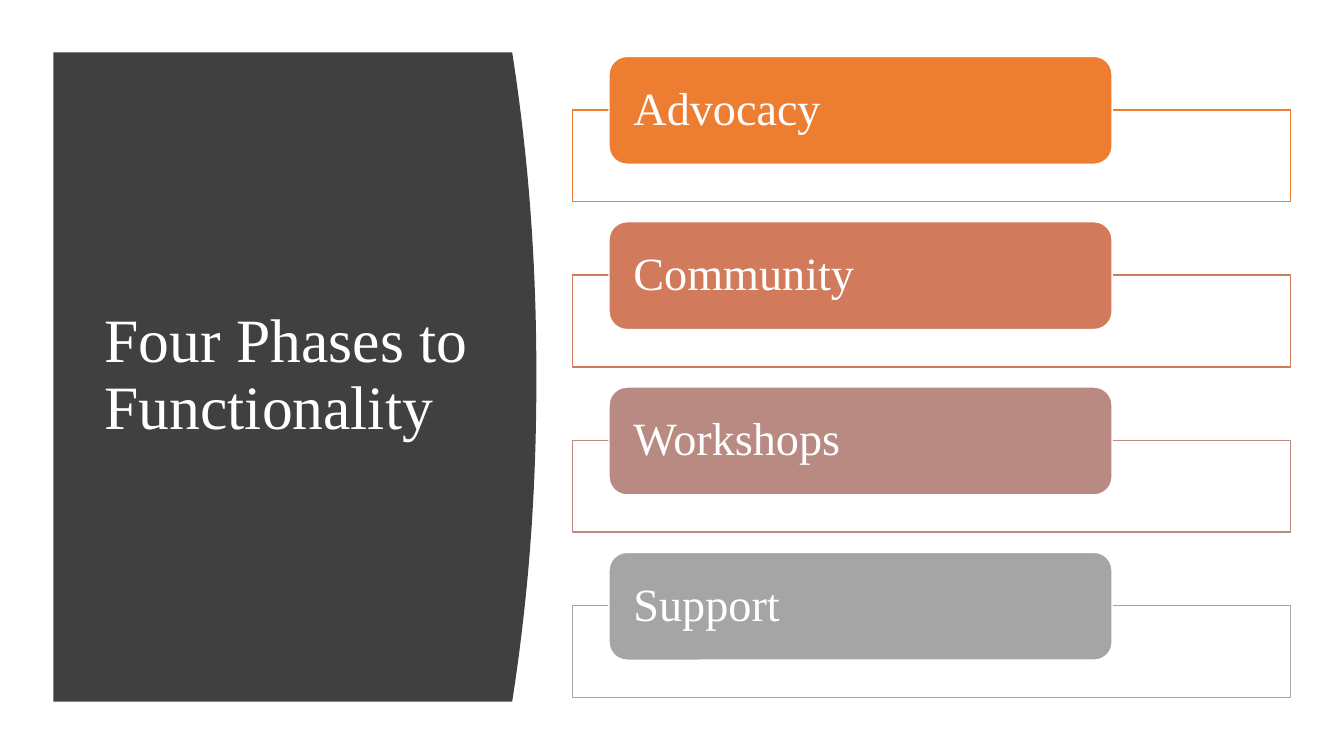
"""Builds a slide with a curved title panel and four phase bars."""
from lxml import etree
from pptx import Presentation
from pptx.dml.color import RGBColor
from pptx.enum.shapes import MSO_SHAPE
from pptx.enum.text import MSO_ANCHOR, PP_ALIGN
from pptx.oxml.ns import qn
from pptx.util import Inches, Pt

RECT = MSO_SHAPE.RECTANGLE
ROUND = MSO_SHAPE.ROUNDED_RECTANGLE
MIDDLE = MSO_ANCHOR.MIDDLE
LEFT = PP_ALIGN.LEFT

FONT = "Times New Roman"
WHITE = "FFFFFF"
DARK = "404040"
PHASES = [
    ("Advocacy", "ED7D31"),
    ("Community", "D17B5C"),
    ("Workshops", "B98A82"),
    ("Support", "A5A5A5"),
]
TOP = 0.56
PITCH = 1.64
STEPS = 40


def color(code):
    """Turn a hex string into a colour."""
    return RGBColor.from_string(code)


def paint(shape, fill, line=None, alpha=None):
    """Set the fill, its opacity in percent, and the outline."""
    shape.shadow.inherit = False
    shape.fill.solid()
    shape.fill.fore_color.rgb = color(fill)
    if alpha is not None:
        tint = shape.fill._xPr.find(qn("a:solidFill"))[0]
        etree.SubElement(tint, qn("a:alpha"), val=str(alpha * 1000))
    if line:
        shape.line.color.rgb = color(line)
        shape.line.width = Pt(1)
    else:
        shape.line.fill.background()


def write(shape, text, size, inset=0.1, edge=0.05):
    """Write white, left-aligned text in the middle of a shape."""
    frame = shape.text_frame
    frame.word_wrap = True
    frame.vertical_anchor = MIDDLE
    frame.margin_left = frame.margin_right = Inches(inset)
    frame.margin_top = frame.margin_bottom = Inches(edge)
    para = frame.paragraphs[0]
    para.alignment = LEFT
    para.line_spacing = 0.9
    run = para.add_run()
    run.text = text
    run.font.name = FONT
    run.font.size = Pt(size)
    run.font.color.rgb = color(WHITE)


def add_box(slide, kind, left, top, width, height):
    """Add a preset shape, measured in inches."""
    return slide.shapes.add_shape(
        kind, Inches(left), Inches(top), Inches(width), Inches(height))


def add_panel(slide, left, top, right, bottom, bulge):
    """Add a dark panel whose right side bulges outwards."""
    points = []
    for step in range(STEPS + 1):
        part = step / STEPS
        curve = bulge * (1 - abs(2 * part - 1) ** 2.1)
        points.append((Inches(right + curve),
                       Inches(top + part * (bottom - top))))
    points.append((Inches(left), Inches(bottom)))
    maker = slide.shapes.build_freeform(Inches(left), Inches(top))
    maker.add_line_segments(points, close=True)
    paint(maker.convert_to_shape(), DARK)


def add_title(slide, text):
    """Add the title on the panel."""
    box = slide.shapes.add_textbox(
        Inches(0.94), Inches(1.11), Inches(4.06), Inches(5.24))
    write(box, text, 44)


def add_phase(slide, top, name, tone):
    """Add one phase: an outlined frame with a label over it."""
    frame = add_box(slide, RECT, 5.68, top + 0.53, 7.12, 0.91)
    paint(frame, WHITE, line=tone, alpha=90)
    label = add_box(slide, ROUND, 6.04, top, 4.99, 1.07)
    paint(label, tone, line=WHITE)
    write(label, name, 33, inset=0.19, edge=0)


def main():
    """Build and save the slide."""
    deck = Presentation()
    deck.slide_width = Inches(13.33)
    deck.slide_height = Inches(7.5)
    slide = deck.slides.add_slide(deck.slide_layouts[6])
    add_panel(slide, 0.53, 0.52, 5.08, 6.96, 0.24)
    add_title(slide, "Four Phases to Functionality")
    for row, (name, tone) in enumerate(PHASES):
        add_phase(slide, TOP + row * PITCH, name, tone)
    deck.save("out.pptx")


if __name__ == "__main__":
    main()
